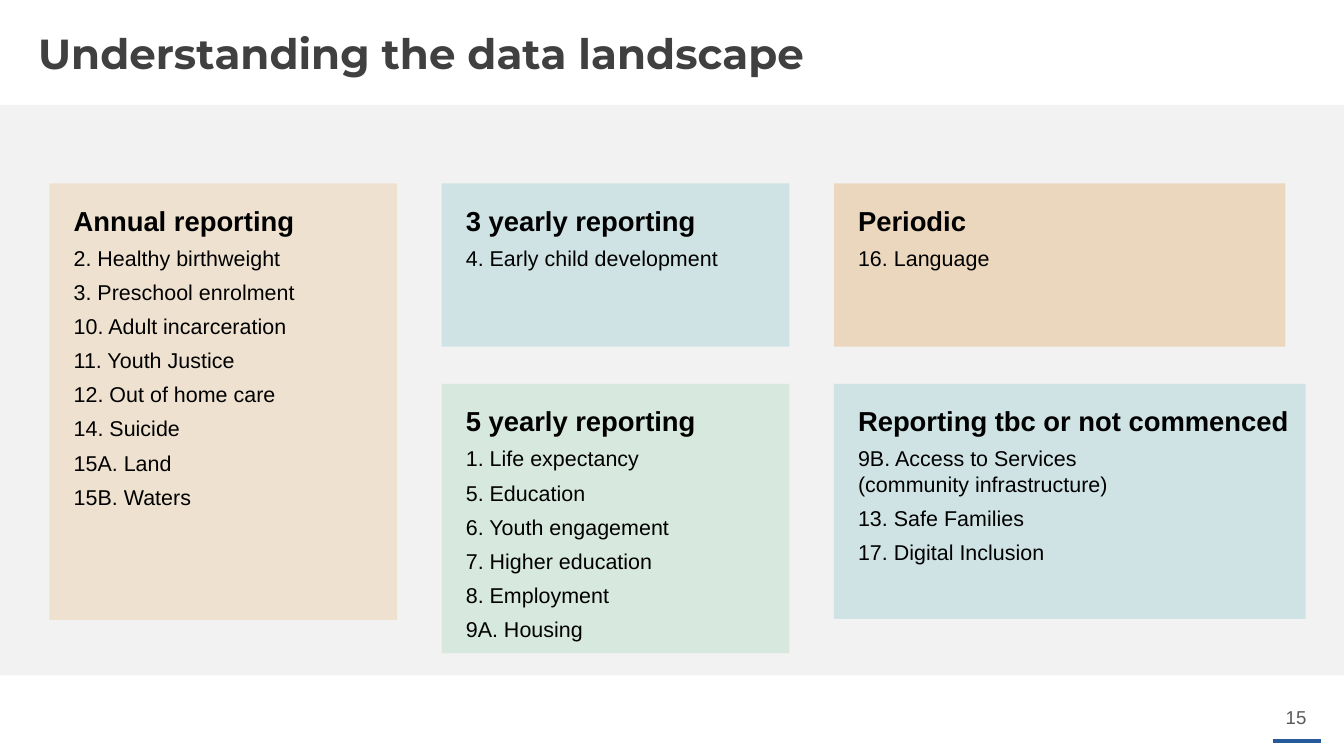
from lxml.etree import SubElement
from pptx import Presentation
from pptx.dml.color import RGBColor
from pptx.enum.shapes import MSO_CONNECTOR, MSO_SHAPE
from pptx.enum.text import MSO_ANCHOR, PP_ALIGN
from pptx.oxml.ns import qn
from pptx.util import Inches, Pt

WIDE, HIGH = 13.33, 7.5
LEFT, TOP = 0.49, 1.82
COL, ROW = 3.89, 1.99
CARD = 3.45

CARDS = [
    (0, 0, CARD, 4.33, "E9C293", "Annual reporting",
     ["2. Healthy birthweight", "3. Preschool enrolment",
      "10. Adult incarceration", "11. Youth Justice",
      "12. Out of home care", "14. Suicide", "15A. Land", "15B. Waters"]),
    (1, 0, CARD, 1.62, "8EC9CA", "3 yearly reporting",
     ["4. Early child development"]),
    (1, 1, CARD, 2.67, "A7D8BC", "5 yearly reporting",
     ["1. Life expectancy", "5. Education", "6. Youth engagement",
      "7. Higher education", "8. Employment", "9A. Housing"]),
    (2, 0, 4.48, 1.62, "DFA45E", "Periodic", ["16. Language"]),
    (2, 1, 4.68, 2.33, "8EC9CA", "Reporting tbc or not commenced",
     ["9B. Access to Services \v(community infrastructure)",
      "13. Safe Families", "17. Digital Inclusion"]),
]


def paint(target, code):
    target.rgb = RGBColor.from_string(code)


def style(para, face, size, code, bold=False):
    for run in para.runs:
        run.font.name = face
        run.font.size = Pt(size)
        run.font.bold = bold
        paint(run.font.color, code)


def inset(frame, *sides):
    (frame.margin_left, frame.margin_top,
     frame.margin_right, frame.margin_bottom) = map(Inches, sides)


def block(slide, box, code, alpha=None):
    shape = slide.shapes.add_shape(MSO_SHAPE.RECTANGLE, *map(Inches, box))
    shape.shadow.inherit = False
    shape.line.fill.background()
    shape.fill.solid()
    paint(shape.fill.fore_color, code)
    if alpha:
        tint = shape.fill._xPr.find(qn("a:solidFill"))[0]
        SubElement(tint, qn("a:alpha")).set("val", str(alpha * 1000))
    return shape


def label(slide, box, text):
    frame = slide.shapes.add_textbox(*map(Inches, box)).text_frame
    frame.word_wrap = False
    frame.text = text
    return frame


def title(slide, box, text):
    para = label(slide, box, text).paragraphs[0]
    para.alignment = PP_ALIGN.LEFT
    para.line_spacing = 0.9
    para.space_after = Pt(6)
    style(para, "Montserrat", 30, "404040", True)


def card(slide, box, code, head, items):
    frame = block(slide, box, code, 35).text_frame
    frame.word_wrap = True
    frame.vertical_anchor = MSO_ANCHOR.TOP
    inset(frame, 0.24, 0.2, 0.1, 0.05)
    frame.text = head
    for item in items:
        frame.add_paragraph().text = item
    for i, para in enumerate(frame.paragraphs):
        para.alignment = PP_ALIGN.LEFT
        para.space_after = Pt(6)
        style(para, "Arial", 15.3 if i else 19.6, "000000", i == 0)


def footer(slide, box, text):
    x, y, w, h = box
    frame = label(slide, box, text)
    frame.vertical_anchor = MSO_ANCHOR.MIDDLE
    inset(frame, 0.1, 0.1, 0.1, 0.1)
    para = frame.paragraphs[0]
    para.alignment = PP_ALIGN.CENTER
    style(para, "Arial", 13.3, "595959")
    ends = (x - 0.01, y + 0.45, x + 0.46, y + 0.45)
    rule = slide.shapes.add_connector(MSO_CONNECTOR.STRAIGHT, *map(Inches, ends))
    rule.line.width = Pt(2.75)
    paint(rule.line.color, "265A9A")
    SubElement(rule._element.spPr, qn("a:effectLst"))


def main():
    deck = Presentation()
    deck.slide_width, deck.slide_height = Inches(WIDE), Inches(HIGH)
    slide = deck.slides.add_slide(deck.slide_layouts[6])
    block(slide, (0, 1.04, WIDE, 5.66), "F2F2F2")
    footer(slide, (12.64, 6.9, 0.43, 0.42), "15")
    title(slide, (0.28, 0.28, 8, 0.57), "Understanding the data landscape")
    for col, row, wide, high, code, head, items in CARDS:
        box = (LEFT + col * COL, TOP + row * ROW, wide, high)
        card(slide, box, code, head, items)
    deck.save("out.pptx")


if __name__ == "__main__":
    main()
